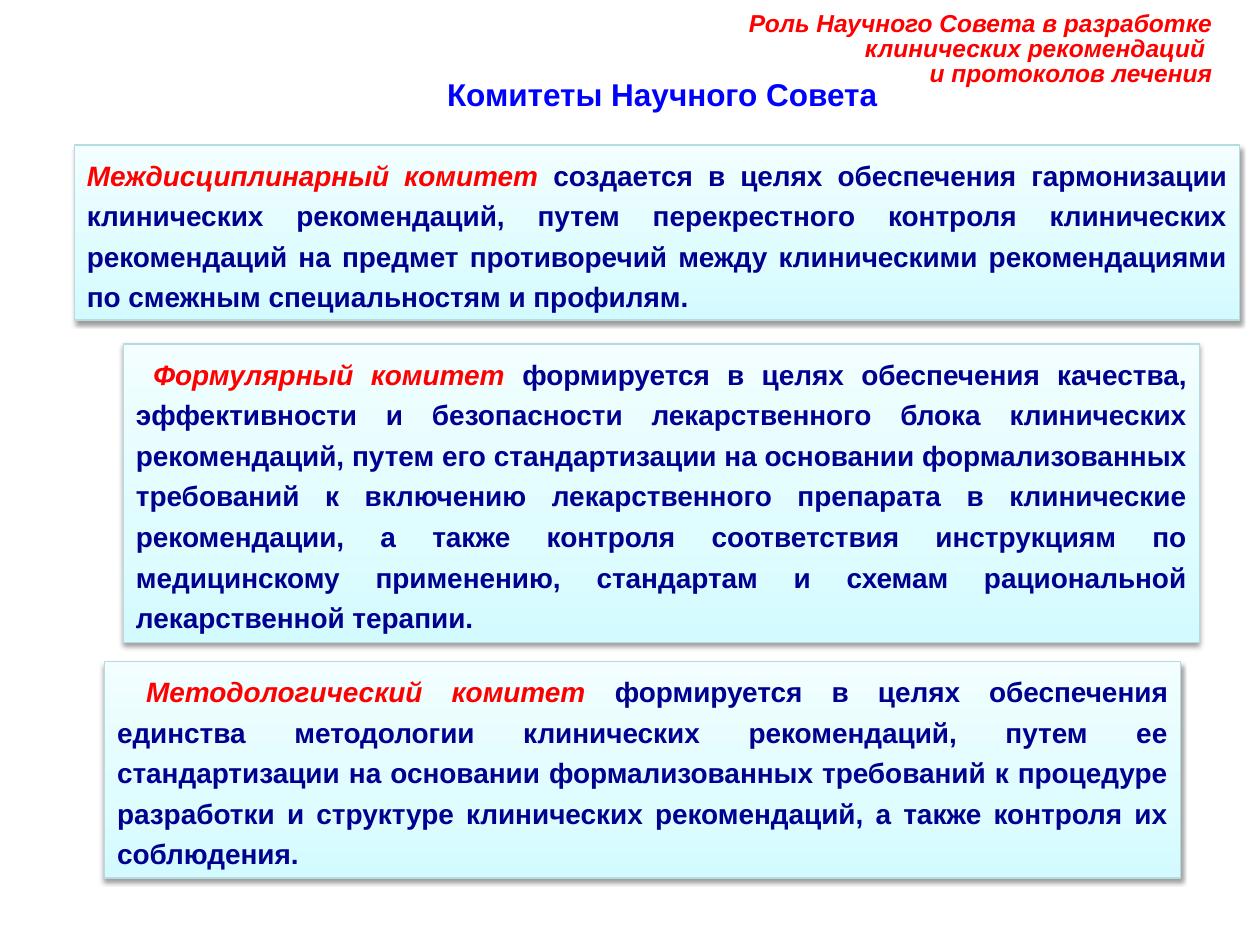
"""Builds a slide on the committees of the Scientific Council."""
from pptx import Presentation
from pptx.dml.color import RGBColor
from pptx.enum.shapes import MSO_SHAPE as Shape
from pptx.enum.text import MSO_ANCHOR as Anchor, PP_ALIGN as Align
from pptx.oxml import parse_xml
from pptx.util import Pt

RED = RGBColor(0xFF, 0x00, 0x00)
BLUE = RGBColor(0x00, 0x00, 0xFF)
NAVY = RGBColor(0x00, 0x00, 0x90)
BORDER = RGBColor(0xB6, 0xDC, 0xDF)

XMLNS = 'xmlns:a="http://schemas.openxmlformats.org/drawingml/2006/main"'
GRADIENT = f"""<a:gradFill {XMLNS} rotWithShape="1"><a:gsLst>
<a:gs pos="0"><a:srgbClr val="D3FBFF"/></a:gs>
<a:gs pos="35000"><a:srgbClr val="DFFCFF"/></a:gs>
<a:gs pos="100000"><a:srgbClr val="F2FEFF"/></a:gs>
</a:gsLst><a:lin ang="16200000" scaled="1"/></a:gradFill>"""
SHADOW = f"""<a:effectLst {XMLNS}>
<a:outerShdw blurRad="40000" dist="20000" dir="5400000" rotWithShape="0">
<a:srgbClr val="000000"><a:alpha val="38000"/></a:srgbClr>
</a:outerShdw></a:effectLst>"""

HEADINGS = [
    ((247, 43.2, 262.8, 25.2), Align.CENTER, 0.8, 18, BLUE, False,
     ["Комитеты Научного Совета"]),
    ((405.4, 3.6, 294.5, 51.1), Align.RIGHT, 0.85, 14, RED, True,
     ["Роль Научного Совета в разработке клинических рекомендаций ",
      "и протоколов лечения"]),
]
COMMITTEES = [
    ((59.8, 82.8, 666, 100.1), "", "Междисциплинарный комитет ",
     "создается в целях обеспечения гармонизации клинических рекомендаций, "
     "путем перекрестного контроля клинических рекомендаций на предмет "
     "противоречий между клиническими рекомендациями по смежным "
     "специальностям и профилям."),
    ((70.6, 196.6, 614.9, 170.6), " ", "Формулярный комитет ",
     "формируется в целях обеспечения качества, эффективности и безопасности "
     "лекарственного блока клинических рекомендаций, путем его стандартизации "
     "на основании формализованных требований к включению лекарственного "
     "препарата в клинические рекомендации, а также контроля соответствия "
     "инструкциям по медицинскому применению, стандартам и схемам "
     "рациональной лекарственной терапии."),
    ((59.8, 378, 614.9, 123.8), " ", "Методологический комитет ",
     "формируется в целях обеспечения единства методологии клинических "
     "рекомендаций, путем ее стандартизации на основании формализованных "
     "требований к процедуре разработки и структуре клинических рекомендаций, "
     "а также контроля их соблюдения."),
]


def add_span(para, text, size, color, italic):
    span = para.add_run()
    span.text = text
    span.font.name = "Arial"
    span.font.size = Pt(size)
    span.font.bold = True
    span.font.italic = italic
    span.font.color.rgb = color


deck = Presentation()
deck.slide_width, deck.slide_height = Pt(720), Pt(540)
page = deck.slides.add_slide(deck.slide_layouts[6])

for place, align, spacing, size, color, italic, lines in HEADINGS:
    box = page.shapes.add_textbox(*map(Pt, place))
    frame = box.text_frame
    frame.word_wrap = True
    for index, line in enumerate(lines):
        para = frame.add_paragraph() if index else frame.paragraphs[0]
        para.alignment = align
        para.line_spacing = spacing
        add_span(para, line, size, color, italic)

for (left, top, width, height), lead, name, purpose in COMMITTEES:
    left = 42.5 if not lead else left
    box = page.shapes.add_shape(Shape.RECTANGLE, Pt(left), Pt(top), Pt(width), Pt(height))
    properties = box._element.spPr
    properties.append(parse_xml(GRADIENT))
    box.line.color.rgb = BORDER
    box.line.width = Pt(0.75)
    properties.append(parse_xml(SHADOW))
    frame = box.text_frame
    frame.word_wrap = True
    frame.vertical_anchor = Anchor.TOP
    para = frame.paragraphs[0]
    para.alignment = Align.JUSTIFY
    para.line_spacing = Pt(23.2)
    if lead:
        add_span(para, lead, 16, NAVY, True)
    add_span(para, name, 16, RED, True)
    add_span(para, purpose, 16, NAVY, False)

deck.save("out.pptx")
